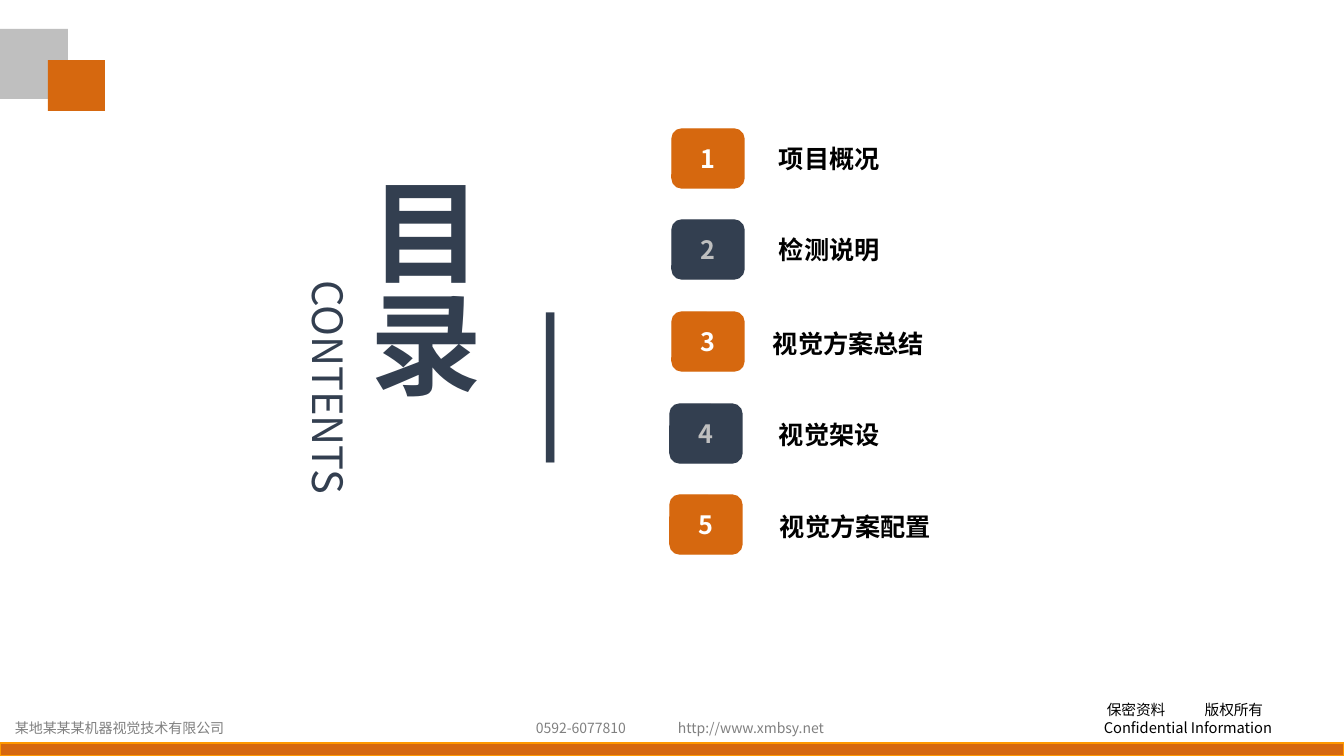
"""Build a contents slide with five numbered sections and a company footer."""
from lxml.etree import SubElement
from pptx import Presentation
from pptx.dml.color import RGBColor
from pptx.enum.shapes import MSO_SHAPE
from pptx.enum.text import MSO_ANCHOR, MSO_AUTO_SIZE, PP_ALIGN
from pptx.oxml.ns import qn
from pptx.util import Pt

PX = 9071
FONT = "Noto Sans CJK SC"
ORANGE, NAVY, SILVER, GREY = "D6680F", "333F50", "BFBFBF", "808080"
BLACK, WHITE, AMBER = "000000", "FFFFFF", "FF9900"

deck = Presentation()
deck.slide_width, deck.slide_height = 1344 * PX, 756 * PX
slide = deck.slides.add_slide(deck.slide_layouts[6])


def block(left, top, width, height, fill, line=None, kind=MSO_SHAPE.RECTANGLE):
    shape = slide.shapes.add_shape(kind, left * PX, top * PX, width * PX, height * PX)
    shape.shadow.inherit = False
    shape.fill.solid()
    shape.fill.fore_color.rgb = RGBColor.from_string(fill)
    if line:
        shape.line.color.rgb = RGBColor.from_string(line)
        shape.line.width = Pt(1)
    else:
        shape.line.fill.background()
    return shape


def write(text, box=None, shape=None, size=18, color=BLACK, bold=False,
          align=PP_ALIGN.LEFT, anchor=MSO_ANCHOR.TOP, wrap=True, inset=None):
    if shape is None:
        shape = slide.shapes.add_textbox(*(length * PX for length in box))
        shape.text_frame.auto_size = MSO_AUTO_SIZE.SHAPE_TO_FIT_TEXT
    frame = shape.text_frame
    frame.word_wrap = wrap
    frame.vertical_anchor = anchor
    if inset is not None:
        frame.margin_left = frame.margin_right = inset
        frame.margin_top = frame.margin_bottom = inset
    for number, line in enumerate(text.split("\n")):
        paragraph = frame.add_paragraph() if number else frame.paragraphs[0]
        paragraph.alignment = align
        run = paragraph.add_run()
        run.text = line
        run.font.size, run.font.bold, run.font.name = Pt(size), bold, FONT
        run.font.color.rgb = RGBColor.from_string(color)
        SubElement(run.font._element, qn("a:ea"), typeface=FONT)
    return shape


block(0, 743, 1344, 13, ORANGE, AMBER)
notice = write("保密资料\t版权所有\nConfidential Information", (1094, 696, 219, 45), size=10.5)
notice_format = notice.text_frame.paragraphs[0]._p.get_or_add_pPr()
notice_format.set("indent", str(3 * PX))
notice_tabs = SubElement(notice_format, qn("a:tabLst"))
SubElement(notice_tabs, qn("a:tab"), pos=str(81 * PX), algn="l")

for contact, left, top, width in [
    ("http://www.xmbsy.net", 668, 715, 168),
    ("0592-6077810", 526, 715, 121),
    ("某地某某某机器视觉技术有限公司", 5, 715, 237),
]:
    write(contact, (left, top, width, 27), size=10, color=GREY)

block(0, 29, 68, 70, SILVER)
block(48, 60, 57, 51, ORANGE)

title = write("目录", shape=block(355, 176, 135, 395, WHITE), size=79.9, color=NAVY,
              bold=True, anchor=MSO_ANCHOR.MIDDLE, inset=0)
title.text_frame._txBody.bodyPr.set("vert", "eaVert")
subtitle = write("CONTENTS", (157, 362, 344, 50), size=29.8, color=NAVY,
                 align=PP_ALIGN.CENTER, inset=0)
subtitle.rotation = 90
write("|", (523, 286, 51, 173), size=96, color=NAVY, wrap=False)

sections = [
    ("项目概况", 672, 129, 769, 138),
    ("检测说明", 672, 220, 769, 229),
    ("视觉方案总结", 672, 312, 763, 323),
    ("视觉架设", 670, 404, 769, 414),
    ("视觉方案配置", 670, 495, 770, 506),
]
for number, (section, badge_left, badge_top, left, top) in enumerate(sections, 1):
    fill, digit = (ORANGE, WHITE) if number % 2 else (NAVY, SILVER)
    badge = block(badge_left, badge_top, 72, 59, fill, fill, MSO_SHAPE.ROUNDED_RECTANGLE)
    write(str(number), shape=badge, color=digit, bold=True,
          align=PP_ALIGN.CENTER, anchor=MSO_ANCHOR.MIDDLE)
    write(section, (left, top, 210, 40), bold=True, anchor=MSO_ANCHOR.MIDDLE)

deck.save("out.pptx")
